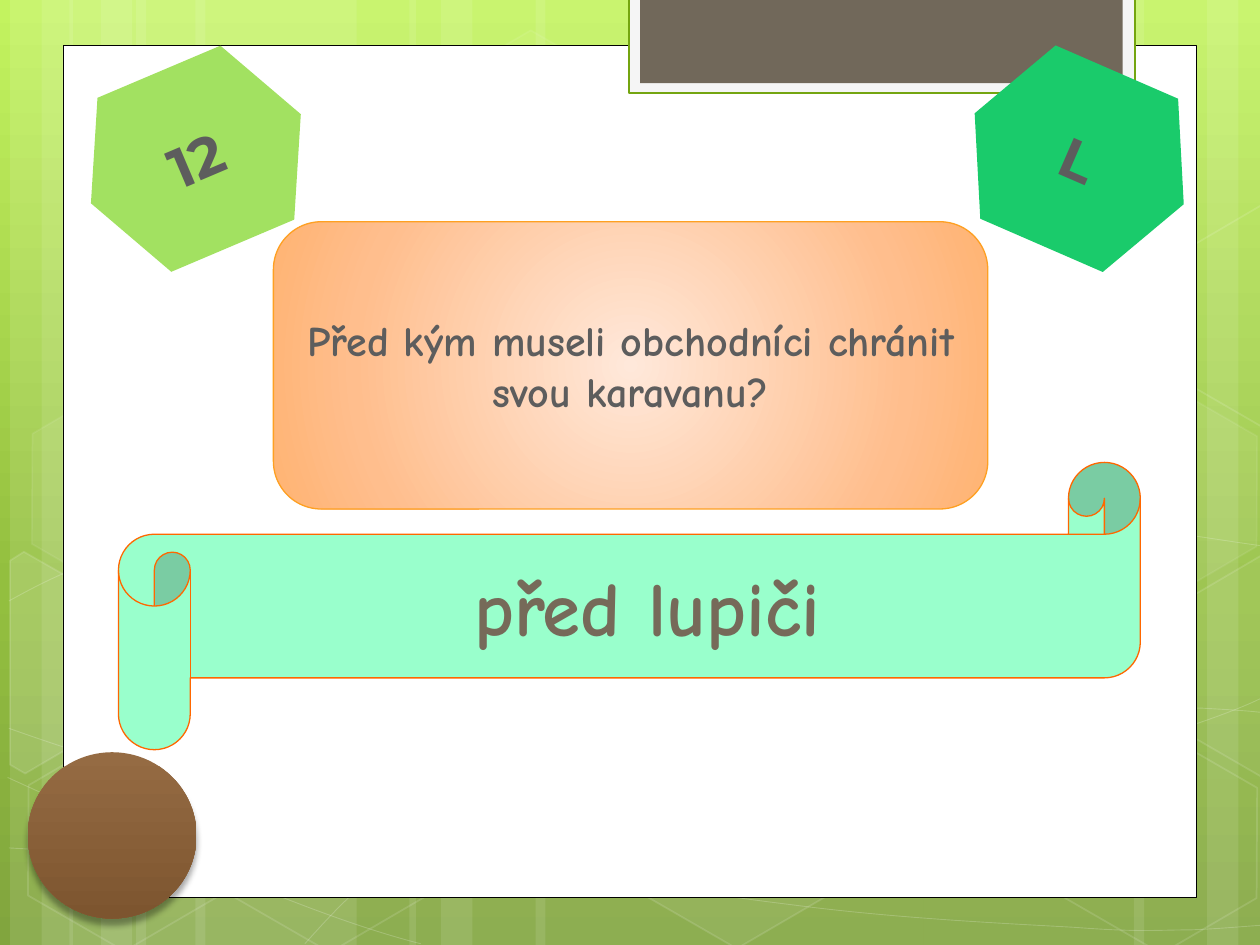
import pptx
import pptx.util
import pptx.oxml
import pptx.oxml.ns
import pptx.dml.color
import pptx.enum.shapes
import pptx.enum.text

Inches, Pt = pptx.util.Inches, pptx.util.Pt
RGB = pptx.dml.color.RGBColor.from_string
SHAPE = pptx.enum.shapes.MSO_SHAPE
qn = pptx.oxml.ns.qn
NS = pptx.oxml.ns.nsdecls("a")

THEME = {
    "white": "FFFFFF", "black": "000000", "tab_edge": "74A510", "tab_rim": "F5F5F5",
    "tab": "71685A", "letter": "1ACB6B", "number": "A2E161", "ink": "5D5D5D",
    "card_edge": "FEA022", "scroll": "99FFCC", "scroll_edge": "FF6700", "answer_ink": "766A59",
    "sky": [(0, "C3F35F"), (62, "93BF3F"), (100, "81A53E")],
    "card": [(0, "FFE8DA"), (72, "FFBE8D"), (100, "FFB372")],
    "button": [(0, "956B43"), (100, "7D552F")],
    "badge_font": "Montserrat", "body_font": "Comic Neue",
    "badge_size": 32, "question_size": 24, "answer_size": 44,
}

NUMBER, LETTER = "12", "L"
QUESTION = "Před kým museli obchodníci chránit svou karavanu?"
ANSWER = "před lupiči"

# Background stripes: left, width
STRIPES = [(1.08, 1.75), (0.08, 0.5), (0.33, 0.83), (1.55, 1.75), (0.55, 0.5), (0.8, 0.83),
           (7.33, 1.75), (9.58, 0.5), (9, 0.83), (4.25, 3.08), (3.25, 0.5), (3.5, 0.83)]

# Background waves: a start point, then cubic pieces of two handles and an end point
WAVES = [
    [(0.07, 6.73), (0.61, 6.76), (1.15, 6.79), (1.9, 6.78), (2.65, 6.77), (3.58, 6.75),
     (4.58, 6.65), (5.58, 6.55), (7, 6.36), (7.92, 6.17), (8.83, 5.98), (9.77, 5.68), (10.07, 5.51)],
    [(0.07, 4.77), (0.36, 4.61), (0.65, 4.46), (1.21, 4.31), (1.78, 4.16), (2.59, 3.94),
     (3.47, 3.87), (4.36, 3.8), (5.44, 3.79), (6.54, 3.87), (7.64, 3.95), (9.47, 4.26), (10.07, 4.34)],
    [(0.06, 6.17), (1.27, 6.72), (2.47, 7.27), (3.34, 7.49)],
    [(0.07, 5.78), (0.38, 5.89), (0.7, 6), (1.28, 6.16), (1.86, 6.31), (2.73, 6.56), (3.57, 6.73),
     (4.4, 6.9), (5.45, 7.08), (6.28, 7.18), (7.11, 7.29), (8, 7.33), (8.53, 7.36),
     (9.05, 7.4), (9.19, 7.38), (9.45, 7.38), (9.71, 7.37), (9.89, 7.35), (10.07, 7.34)],
    [(2.42, 7.49), (2.6, 7.29), (2.78, 7.09), (3.02, 6.91), (3.26, 6.73), (3.6, 6.53), (3.88, 6.39),
     (4.16, 6.25), (4.33, 6.19), (4.7, 6.09), (5.06, 5.99), (5.73, 5.85), (6.08, 5.78),
     (6.44, 5.71), (6.49, 5.71), (6.8, 5.69), (7.11, 5.66), (7.6, 5.63), (7.94, 5.62),
     (8.29, 5.61), (8.86, 5.62), (8.86, 5.62), (9.08, 5.62), (9.31, 5.62), (9.53, 5.62),
     (9.71, 5.63), (9.88, 5.64), (9.97, 5.65), (10.06, 5.66), (10.03, 5.65), (10.06, 5.66)],
]

# Honeycomb: left, top, fill opacity, line opacity (percent)
CELLS = [(3.34, 0.36, 4, 8), (4.97, 5.89, 6, 12), (0.11, 5.91, 0, 12), (0.14, 3.12, 7, 8),
         (1.74, 5.92, 0, 12), (7.53, 4.53, 10, 12), (8.34, 5.93, 0, 12), (8.34, 3.14, 7, 8)]

# Cells cut by the slide edge: fill opacity, corners
CUT_CELLS = [
    (10, [(0.08, 4.45), (0.19, 4.38), (0.96, 4.82), (0.95, 5.7), (0.2, 6.14), (0.08, 6.07)]),
    (4, [(9.26, 4.85), (10.01, 4.41), (10.09, 4.46), (10.09, 6.13), (10.02, 6.17), (9.26, 5.73)]),
    (0, [(9.26, 2.07), (10.01, 1.63), (10.1, 1.68), (10.09, 3.35), (10.02, 3.39), (9.26, 2.95)]),
]


def set_opacity(holder, percent):
    color = holder.find(".//" + qn("a:srgbClr"))
    color.append(pptx.oxml.parse_xml(f'<a:alpha {NS} val="{percent * 1000}"/>'))


def set_gradient(fill, holder, stops, radial=False):
    """Fill with stops of (percent, colour), downwards or from the centre."""
    fill.gradient()
    gradient = holder.find(".//" + qn("a:gradFill"))
    marks = "".join(f'<a:gs pos="{at * 1000}"><a:srgbClr val="{color}"/></a:gs>'
                    for at, color in stops)
    direction = ('<a:path path="circle"><a:fillToRect l="50000" t="50000" r="50000" b="50000"/></a:path>'
                 if radial else '<a:lin ang="5400000" scaled="0"/>')
    fresh = pptx.oxml.parse_xml(f'<a:gradFill {NS} rotWithShape="1">'
                                f'<a:gsLst>{marks}</a:gsLst>{direction}</a:gradFill>')
    gradient.getparent().replace(gradient, fresh)


def dress(shape, fill=None, line=None, width=0.75, fill_opacity=100, line_opacity=100):
    shape.shadow.inherit = False
    if fill and fill_opacity:
        shape.fill.solid()
        shape.fill.fore_color.rgb = RGB(THEME[fill])
        if fill_opacity < 100:
            set_opacity(shape._element.spPr.find(qn("a:solidFill")), fill_opacity)
    else:
        shape.fill.background()
    if line:
        shape.line.color.rgb = RGB(THEME[line])
        shape.line.width = Pt(width)
        if line_opacity < 100:
            set_opacity(shape._element.spPr.find(qn("a:ln")), line_opacity)
    else:
        shape.line.fill.background()
    return shape


def add_preset(slide, kind, box, rotation=0, **look):
    shape = slide.shapes.add_shape(kind, *map(Inches, box))
    shape.rotation = rotation
    return dress(shape, **look)


def add_outline(slide, corners, closed, **look):
    points = [(Inches(x), Inches(y)) for x, y in corners]
    builder = slide.shapes.build_freeform(*points[0])
    builder.add_line_segments(points[1:], close=closed)
    return dress(builder.convert_to_shape(), **look)


def bend(outline):
    """Turn every three straight segments into one cubic curve."""
    segments = list(outline._element.iter(qn("a:lnTo")))
    for first in range(0, len(segments), 3):
        curve = pptx.oxml.parse_xml(f"<a:cubicBezTo {NS}/>")
        segments[first].addprevious(curve)
        for segment in segments[first:first + 3]:
            curve.append(segment[0])
            segment.getparent().remove(segment)


def write(shape, text, font, size, color):
    frame = shape.text_frame
    frame.word_wrap = True
    frame.vertical_anchor = pptx.enum.text.MSO_ANCHOR.MIDDLE
    paragraph = frame.paragraphs[0]
    paragraph.alignment = pptx.enum.text.PP_ALIGN.CENTER
    run = paragraph.add_run()
    run.text = text
    for name, value in {"name": THEME[font], "size": Pt(THEME[size]), "bold": True}.items():
        setattr(run.font, name, value)
    run.font.color.rgb = RGB(THEME[color])


def draw_backdrop(slide):
    set_gradient(slide.background.fill, slide._element, THEME["sky"])
    for left, width in STRIPES:
        add_preset(slide, SHAPE.RECTANGLE, (left, 0, width, 7.5), fill="white", fill_opacity=10)
    for wave in WAVES:
        bend(add_outline(slide, wave, False, line="white", width=0.5, line_opacity=20))
    for left, top, fill_opacity, line_opacity in CELLS:
        cell = add_preset(slide, SHAPE.HEXAGON, (left, top, 1.75, 1.52), 30, fill="white", line="white",
                          width=1, fill_opacity=fill_opacity, line_opacity=line_opacity)
        cell.adjustments[0] = 0.285
    for fill_opacity, corners in CUT_CELLS:
        add_outline(slide, corners, True, fill="white", line="white", width=1,
                    fill_opacity=fill_opacity, line_opacity=12)
    add_preset(slide, SHAPE.RECTANGLE, (0.5, 0.36, 9, 6.76), fill="white", line="black", width=0.5)
    add_preset(slide, SHAPE.RECTANGLE, (4.99, -0.02, 4.02, 0.76), fill="tab_rim", line="tab_edge", width=1.25)
    add_preset(slide, SHAPE.RECTANGLE, (5.08, -0.02, 3.83, 0.68), fill="tab")


def move_to_master(slide):
    """Hand the shapes drawn so far to the slide master."""
    master_tree = slide.slide_layout.slide_master.shapes._spTree
    for shape in list(slide.shapes):
        master_tree.append(shape._element)


def draw_quiz(slide):
    for text, left, rotation, fill in ((LETTER, 7.66, 23.5, "letter"), (NUMBER, 0.65, 337, "number")):
        badge = add_preset(slide, SHAPE.HEXAGON, (left, 0.51, 1.81, 1.5), rotation, fill=fill)
        write(badge, text, "badge_font", "badge_size", "ink")

    card = add_preset(slide, SHAPE.ROUNDED_RECTANGLE, (2.17, 1.76, 5.67, 2.28), line="card_edge")
    set_gradient(card.fill, card._element.spPr, THEME["card"], radial=True)
    write(card, QUESTION, "body_font", "question_size", "ink")

    button = add_preset(slide, SHAPE.OVAL, (0.22, 5.97, 1.34, 1.32))
    set_gradient(button.fill, button._element.spPr, THEME["button"])
    button._element.spPr.find(qn("a:effectLst")).append(pptx.oxml.parse_xml(
        f'<a:outerShdw {NS} blurRad="{Pt(3.5)}" dist="{Pt(4)}" dir="5400000">'
        f'<a:srgbClr val="{THEME["black"]}"><a:alpha val="34000"/></a:srgbClr></a:outerShdw>'))

    scroll = add_preset(slide, SHAPE.HORIZONTAL_SCROLL, (0.94, 3.67, 8.11, 2.28),
                        fill="scroll", line="scroll_edge")
    scroll.adjustments[0] = 0.25
    write(scroll, ANSWER, "body_font", "answer_size", "answer_ink")


def main():
    deck = pptx.Presentation()
    deck.slide_width, deck.slide_height = Inches(10), Inches(7.5)
    slide = deck.slides.add_slide(deck.slide_layouts[6])
    draw_backdrop(slide)
    move_to_master(slide)
    draw_quiz(slide)
    deck.save("out.pptx")


if __name__ == "__main__":
    main()
